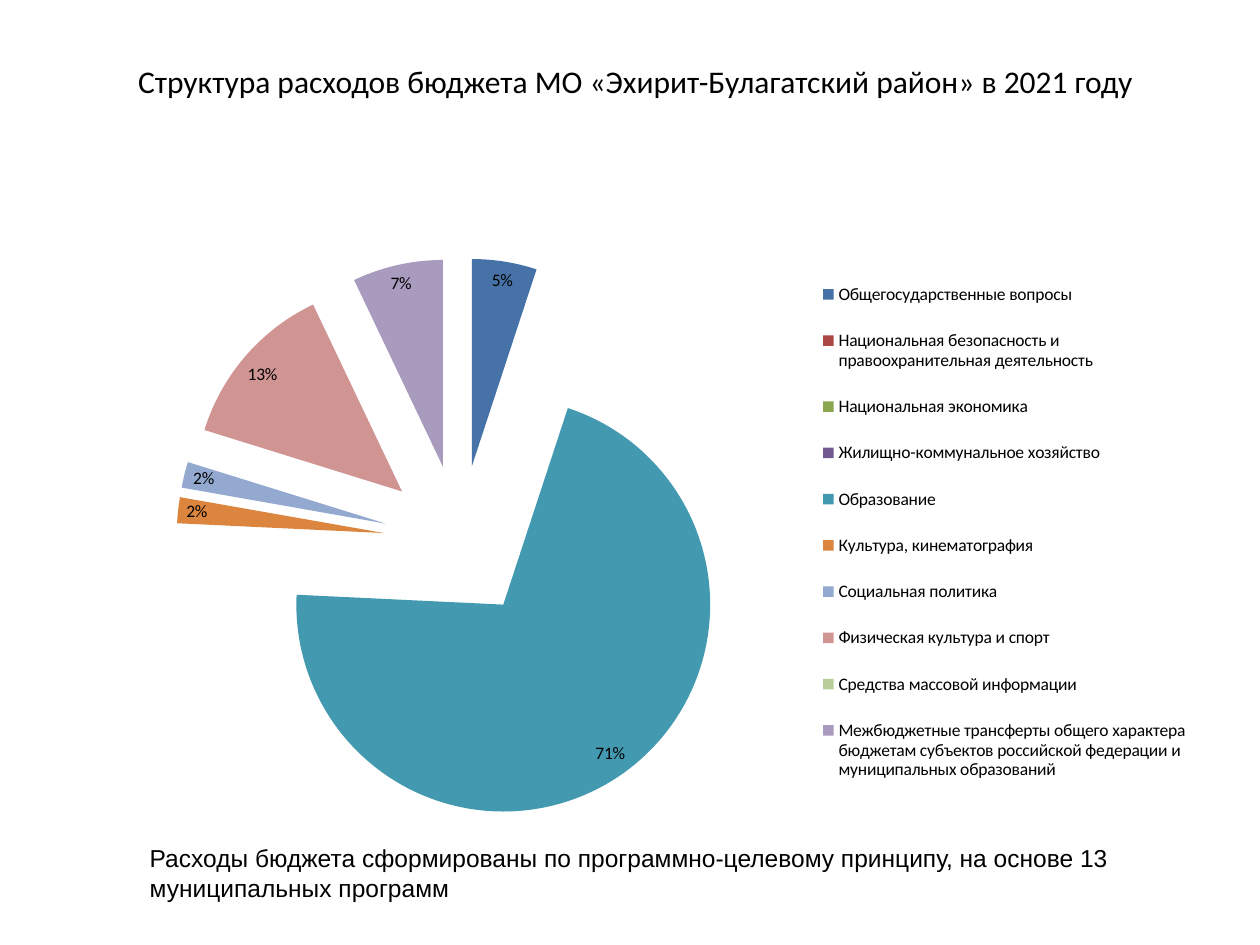
from lxml import etree
from pptx import Presentation
from pptx.chart.data import CategoryChartData
from pptx.dml.color import RGBColor
from pptx.enum.chart import XL_CHART_TYPE, XL_LABEL_POSITION, XL_LEGEND_POSITION
from pptx.enum.text import MSO_ANCHOR, PP_ALIGN
from pptx.oxml.ns import qn
from pptx.util import Inches, Pt

PIE = XL_CHART_TYPE.PIE
BEST_FIT = XL_LABEL_POSITION.BEST_FIT
RIGHT = XL_LEGEND_POSITION.RIGHT
MIDDLE = MSO_ANCHOR.MIDDLE
LEFT, CENTER = PP_ALIGN.LEFT, PP_ALIGN.CENTER

EXPENSES = [
    ("Общегосударственные вопросы", 5, "4672A8"),
    ("Национальная безопасность и правоохранительная деятельность", 0, "AB4744"),
    ("Национальная экономика", 0, "8AA64F"),
    ("Жилищно-коммунальное хозяйство", 0, "725990"),
    ("Образование", 70, "4299B0"),
    ("Культура, кинематография", 2, "DC853E"),
    ("Социальная политика", 2, "93A9D0"),
    ("Физическая культура и спорт", 13, "D09493"),
    ("Средства массовой информации", 0, "B8CD97"),
    ("Межбюджетные трансферты общего характера бюджетам субъектов "
     "российской федерации и муниципальных образований", 7, "A99BBD"),
]


def color(value):
    return RGBColor.from_string(value)


def set_layout(parent, index, target, **fractions):
    for old in parent.findall(qn("c:layout")):
        parent.remove(old)
    layout = etree.Element(qn("c:layout"))
    manual = etree.SubElement(layout, qn("c:manualLayout"))
    settings = {"layoutTarget": target} if target else {}
    settings.update(xMode="edge", yMode="edge", **fractions)
    for name, value in settings.items():
        etree.SubElement(manual, qn(f"c:{name}")).set("val", str(value))
    parent.insert(index, layout)


class SlideBuilder:
    text_color = "000000"
    chart_font = "Calibri"
    chart_size = 10

    def __init__(self, page):
        self.page = page

    def style(self, font, name, size):
        font.name = name
        font.size = Pt(size)
        font.color.rgb = color(self.text_color)

    def text(self, bounds, words, name, size, align=LEFT):
        box = self.page.shapes.add_textbox(*map(Inches, bounds))
        frame = box.text_frame
        frame.word_wrap = True
        frame.vertical_anchor = MIDDLE
        para = frame.paragraphs[0]
        para.alignment = align
        span = para.add_run()
        span.text = words
        self.style(span.font, name, size)

    def pie(self, bounds, title, rows, explosion):
        data = CategoryChartData()
        data.categories = [name for name, _, _ in rows]
        data.add_series(title, [value for _, value, _ in rows])
        chart = self.page.shapes.add_chart(PIE, *map(Inches, bounds), data).chart
        chart.has_title = False
        self.style(chart.font, self.chart_font, self.chart_size)
        plot = chart.plots[0]
        plot.vary_by_categories = True
        series = plot.series[0]
        for index, (_, _, fill) in enumerate(rows):
            point = series.points[index].format
            point.fill.solid()
            point.fill.fore_color.rgb = color(fill)
            point.line.fill.background()
        offset = etree.Element(qn("c:explosion"))
        offset.set("val", str(explosion))
        series._element.find(qn("c:dPt")).addprevious(offset)
        plot.has_data_labels = True
        labels = plot.data_labels
        labels.show_percentage = True
        labels.show_value = False
        labels.number_format = "0%"
        labels.number_format_is_linked = False
        labels.position = BEST_FIT
        self.style(labels.font, self.chart_font, self.chart_size)
        chart.has_legend = True
        legend = chart.legend
        legend.position = RIGHT
        legend.include_in_layout = False
        self.style(legend.font, self.chart_font, self.chart_size)
        area = chart._chartSpace.chart.plotArea
        set_layout(area, 0, "inner", x=0.1, y=0.06, w=0.5, h=0.91)
        set_layout(legend._element, 1, None, x=0.67, y=0.06, w=0.32, h=0.88)


def main():
    deck = Presentation()
    deck.slide_width, deck.slide_height = Inches(10), Inches(7.5)
    builder = SlideBuilder(deck.slides.add_slide(deck.slide_layouts[6]))
    builder.text((0.59, 0.3, 8.91, 0.69),
                 "Структура расходов бюджета МО «Эхирит-Булагатский район» в 2021 году",
                 "Calibri", 18, CENTER)
    builder.pie((0.5, 1.75, 9, 4.95), "Series 1", EXPENSES, 37)
    builder.text((1.09, 6.64, 8.44, 0.57),
                 "Расходы бюджета сформированы по программно-целевому принципу, "
                 "на основе 13 муниципальных программ", "Arial", 14)
    deck.save("out.pptx")


if __name__ == "__main__":
    main()
